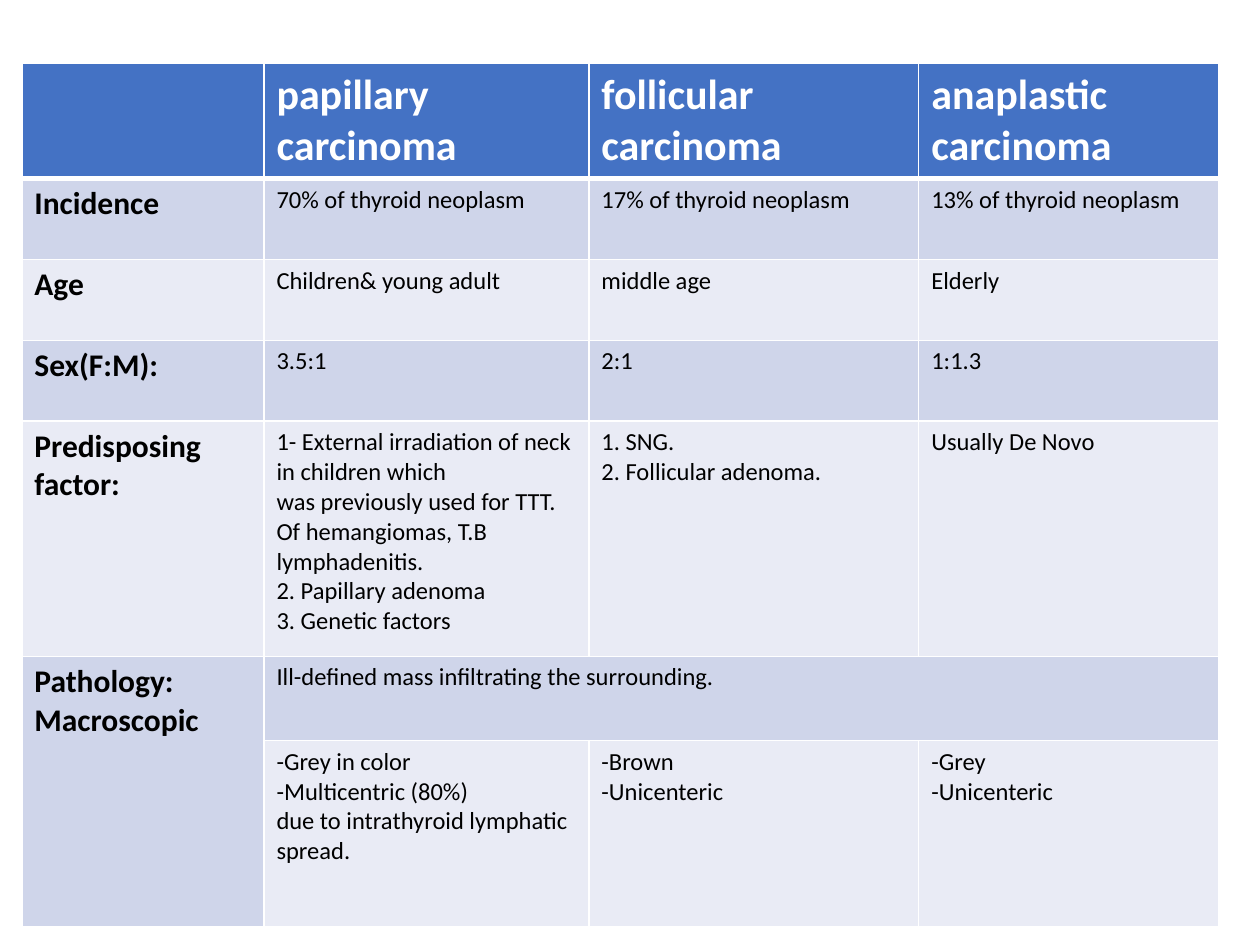
import pptx
import pptx.dml.color
import pptx.oxml
import pptx.oxml.ns
import pptx.util
from pptx.util import Cm

COLORS = {
    "header": "4472C4",
    "dark_band": "CFD5EA",
    "light_band": "E9EBF5",
    "white": "FFFFFF",
    "black": "000000",
}

# Text formats by role
HEADING = {"size": pptx.util.Pt(24), "bold": True, "color": "white"}
FEATURE = {"size": pptx.util.Pt(18), "bold": True, "color": "black"}
FINDING = {"size": pptx.util.Pt(14), "bold": False, "color": "black"}

COLUMN_WIDTHS = [4.88, 6.55, 6.65, 6.05]
ROW_HEIGHTS = [2.3, 1.63, 1.63, 1.63, 4.74, 1.7, 3.76]

# One line of a cell is one paragraph
COMPARISON = [
    ["", "papillary carcinoma", "follicular carcinoma", "anaplastic carcinoma"],
    ["Incidence", "70% of thyroid neoplasm", "17% of thyroid neoplasm",
     "13% of thyroid neoplasm"],
    ["Age", "Children& young adult", "middle age", "Elderly"],
    ["Sex(F:M):", "3.5:1", "2:1", "1:1.3"],
    ["Predisposing factor:",
     "1- External irradiation of neck in children which\n"
     "was previously used for TTT. Of hemangiomas, T.B lymphadenitis.\n"
     "2. Papillary adenoma\n3. Genetic factors",
     "1. SNG.\n2. Follicular adenoma.", "Usually De Novo"],
    ["Pathology:\nMacroscopic",
     "Ill-defined mass infiltrating the surrounding.", "", ""],
    ["", "-Grey in color\n-Multicentric (80%)\n"
     "due to intrathyroid lymphatic spread.",
     "-Brown\n-Unicenteric", "-Grey\n-Unicenteric"],
]

# Merged areas: first and last cell as (row, column)
MERGES = [((5, 0), (6, 0)), ((5, 1), (5, 3))]


class SlideBuilder:
    """Holds the style and the current slide."""

    def __init__(self, slide, font="Calibri"):
        self.slide = slide
        self.font = font

    def color(self, name):
        return pptx.dml.color.RGBColor.from_string(COLORS[name])

    def table(self, left, top, widths, heights, content, merges):
        frame = self.slide.shapes.add_table(
            len(heights), len(widths), Cm(left), Cm(top),
            Cm(sum(widths)), Cm(sum(heights)))
        table = frame.table
        for column, width in zip(table.columns, widths):
            column.width = Cm(width)
        for row, height in zip(table.rows, heights):
            row.height = Cm(height)
        for r, texts in enumerate(content):
            for c, text in enumerate(texts):
                self.cell(table.cell(r, c), r, c, text)
        for first, last in merges:
            table.cell(*first).merge(table.cell(*last))

    def cell(self, cell, row, column, text):
        # The line below the header is thicker
        self.borders(cell, {"L": 1, "R": 1, "T": 3 if row == 1 else 1,
                            "B": 3 if row == 0 else 1})
        band = "dark_band" if row % 2 else "light_band"
        if (row, column) == (6, 0):
            band = "dark_band"
        cell.fill.solid()
        cell.fill.fore_color.rgb = self.color("header" if row == 0 else band)
        if text:
            style = HEADING if row == 0 else FINDING if column else FEATURE
            self.text(cell.text_frame, text, style)

    def borders(self, cell, widths):
        properties = cell._tc.get_or_add_tcPr()
        for side, points in widths.items():
            properties.append(pptx.oxml.parse_xml(
                f'<a:ln{side} {pptx.oxml.ns.nsdecls("a")} '
                f'w="{pptx.util.Pt(points)}"><a:solidFill>'
                f'<a:srgbClr val="{COLORS["white"]}"/></a:solidFill></a:ln{side}>'))

    def text(self, text_frame, text, style):
        text_frame.text = text
        for paragraph in text_frame.paragraphs:
            for run in paragraph.runs:
                run.font.name = self.font
                for name, value in style.items():
                    if name == "color":
                        run.font.color.rgb = self.color(value)
                    else:
                        setattr(run.font, name, value)


def main():
    deck = pptx.Presentation()
    deck.slide_width, deck.slide_height = Cm(25.4), Cm(19.05)
    builder = SlideBuilder(deck.slides.add_slide(deck.slide_layouts[6]))

    # Comparison of thyroid carcinomas
    builder.table(0.44, 1.28, COLUMN_WIDTHS, ROW_HEIGHTS, COMPARISON, MERGES)
    deck.save("out.pptx")


if __name__ == "__main__":
    main()
